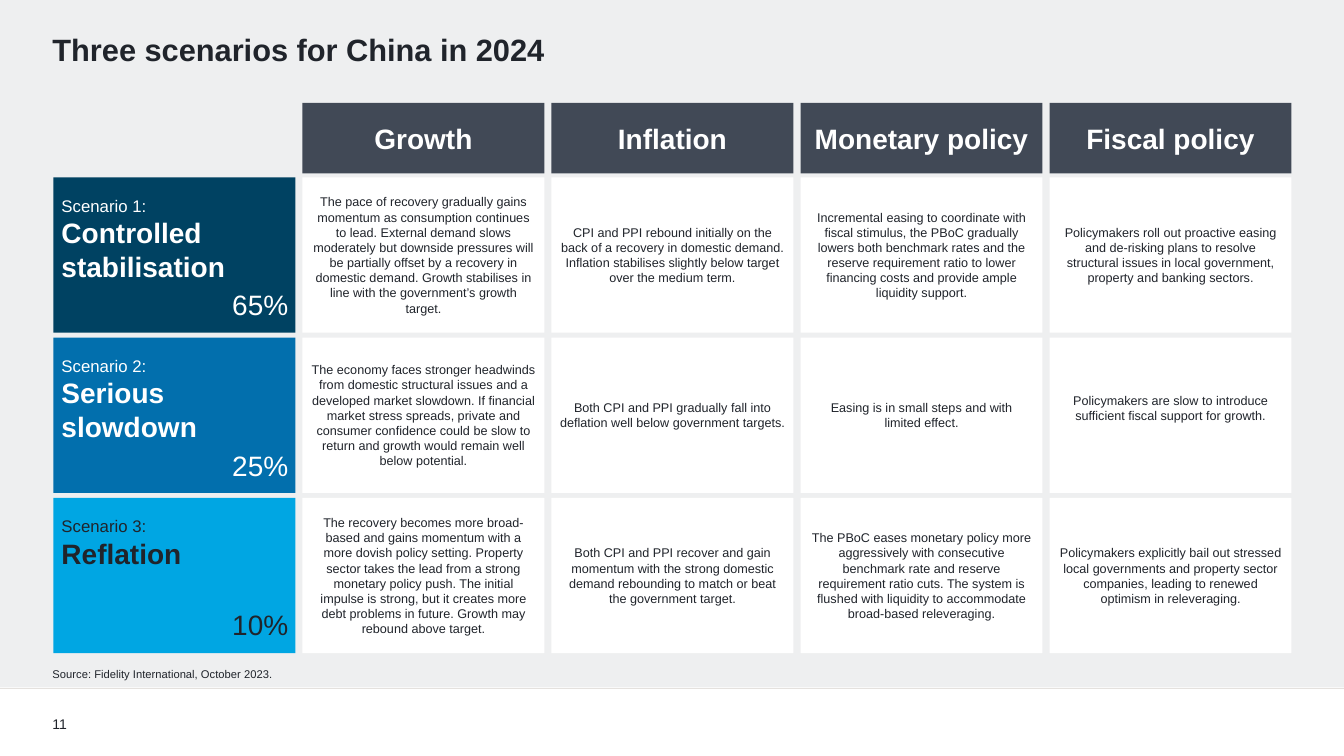
from dataclasses import dataclass

from lxml import etree
from pptx import Presentation
from pptx.dml.color import RGBColor
from pptx.enum.shapes import MSO_CONNECTOR, MSO_SHAPE
from pptx.enum.text import MSO_ANCHOR, PP_ALIGN
from pptx.oxml.ns import qn
from pptx.util import Inches, Pt

LEFT, CENTER, RIGHT = PP_ALIGN.LEFT, PP_ALIGN.CENTER, PP_ALIGN.RIGHT
TOP, MIDDLE, BOTTOM = MSO_ANCHOR.TOP, MSO_ANCHOR.MIDDLE, MSO_ANCHOR.BOTTOM
RECTANGLE = MSO_SHAPE.RECTANGLE
STRAIGHT = MSO_CONNECTOR.STRAIGHT
TITLE_ONLY = 5


@dataclass(frozen=True)
class Theme:
    font: str = "Arial"
    ink: str = "20242B"
    white: str = "FFFFFF"
    panel: str = "EEEFF0"
    rule: str = "E4E1DE"
    header: str = "414956"
    controlled: str = "004262"
    slowdown: str = "026FAD"
    reflation: str = "00A6E3"
    title_size: float = 22
    heading_size: float = 20
    label_size: float = 12
    number_size: float = 10
    body_size: float = 9
    source_size: float = 8


THEME = Theme()
NO_INSETS = (0, 0, 0, 0)
CELL_INSETS = (0.08, 0.04, 0.08, 0.04)
RAISED_INSETS = (0.08, 0.04, 0.08, 0.18)
SCENARIO_INSETS = (0.08, 0.18, 0.08, 0.04)

GRID_LEFT, COLUMN_STEP, CELL_WIDTH = 0.53, 2.47, 2.4
HEADER_TOP, HEADER_HEIGHT = 1.02, 0.7
GRID_TOP, ROW_STEP, CELL_HEIGHT = 1.76, 1.59, 1.54

TOPICS = ["Growth", "Inflation", "Monetary policy", "Fiscal policy"]

# Name, probability, top of the probability, fill, text colour, outlook per topic
SCENARIOS = [
    ("Controlled stabilisation", "65%", 2.85, THEME.controlled, THEME.white, [
        "The pace of recovery gradually gains momentum as consumption continues "
        "to lead. External demand slows moderately but downside pressures will be "
        "partially offset by a recovery in domestic demand. Growth stabilises in "
        "line with the government’s growth target.",
        "CPI and PPI rebound initially on the back of a recovery in domestic "
        "demand. Inflation stabilises slightly below target over the medium term.",
        "Incremental easing to coordinate with fiscal stimulus, the PBoC gradually "
        "lowers both benchmark rates and the reserve requirement ratio to lower "
        "financing costs and provide ample liquidity support.",
        "Policymakers roll out proactive easing and de-risking plans to resolve "
        "structural issues in local government, property and banking sectors.",
    ]),
    ("Serious slowdown", "25%", 4.45, THEME.slowdown, THEME.white, [
        "The economy faces stronger headwinds from domestic structural issues and "
        "a developed market slowdown. If financial market stress spreads, private "
        "and consumer confidence could be slow to return and growth would remain "
        "well below potential.",
        "Both CPI and PPI gradually fall into deflation well below government "
        "targets.",
        "Easing is in small steps and with\nlimited effect.",
        "Policymakers are slow to introduce sufficient fiscal support for growth.",
    ]),
    ("Reflation", "10%", 6.03, THEME.reflation, THEME.ink, [
        "The recovery becomes more broad-based and gains momentum with a more "
        "dovish policy setting. Property sector takes the lead from a strong "
        "monetary policy push. The initial impulse is strong, but it creates more "
        "debt problems in future. Growth may rebound above target.",
        "Both CPI and PPI recover and gain momentum with the strong domestic "
        "demand rebounding to match or beat the government target.",
        "The PBoC eases monetary policy more aggressively with consecutive "
        "benchmark rate and reserve requirement ratio cuts. The system is flushed "
        "with liquidity to accommodate broad-based releveraging.",
        "Policymakers explicitly bail out stressed local governments and property "
        "sector companies, leading to renewed optimism in releveraging.",
    ]),
]
RAISED_CELL = ("Serious slowdown", "Fiscal policy")


class SlideBuilder:
    def __init__(self, page, theme):
        self.page = page
        self.theme = theme

    def set_lines(self, shape, lines, color, align=LEFT, anchor=TOP,
                  insets=NO_INSETS, spacing=None):
        """Fill a shape with one paragraph per (text, size, bold) line."""
        frame = shape.text_frame
        frame.word_wrap = True
        frame.vertical_anchor = anchor
        (frame.margin_left, frame.margin_top,
         frame.margin_right, frame.margin_bottom) = map(Inches, insets)
        for index, (text, size, bold) in enumerate(lines):
            para = frame.add_paragraph() if index else frame.paragraphs[0]
            para.alignment = align
            if spacing:
                para.line_spacing = spacing
            for part_index, part in enumerate(text.split("\n")):
                if part_index:
                    para.add_line_break()
                span = para.add_run()
                span.text = part
                span.font.name = self.theme.font
                span.font.size = Pt(size)
                span.font.bold = bold
                span.font.color.rgb = RGBColor.from_string(color)

    def title(self, text, place):
        title = self.page.shapes.title
        title.left, title.top, title.width, title.height = map(Inches, place)
        self.set_lines(title, [(text, self.theme.title_size, True)], self.theme.ink,
                       anchor=BOTTOM, spacing=0.9)
        # Bring the title in front of the panel
        title.element.getparent().append(title.element)

    def text(self, place, text, size, color, **layout):
        box = self.page.shapes.add_textbox(*map(Inches, place))
        self.set_lines(box, [(text, size, False)], color, **layout)

    def rectangle(self, place, fill):
        box = self.page.shapes.add_shape(RECTANGLE, *map(Inches, place))
        box.shadow.inherit = False
        box.fill.solid()
        box.fill.fore_color.rgb = RGBColor.from_string(fill)
        box.line.fill.background()
        return box

    def cell(self, place, fill, lines, color, align=CENTER, anchor=MIDDLE,
             insets=CELL_INSETS):
        box = self.rectangle(place, fill)
        self.set_lines(box, lines, color, align, anchor, insets)

    def rule(self, left, right, top):
        line = self.page.shapes.add_connector(
            STRAIGHT, Inches(left), Inches(top), Inches(right), Inches(top))
        line.line.color.rgb = RGBColor.from_string(self.theme.rule)
        line.line.width = Pt(0.5)
        etree.SubElement(line.element.spPr, qn("a:effectLst"))


def column_left(column):
    return GRID_LEFT + column * COLUMN_STEP


def add_headers(builder):
    theme = builder.theme
    for column, topic in enumerate(TOPICS, start=1):
        place = (column_left(column), HEADER_TOP, CELL_WIDTH, HEADER_HEIGHT)
        builder.cell(place, theme.header, [(topic, theme.heading_size, True)],
                     theme.white)


def add_scenarios(builder):
    theme = builder.theme
    for row, (name, chance, chance_top, fill, color, outlooks) in enumerate(SCENARIOS):
        top = GRID_TOP + row * ROW_STEP
        lines = [(f"Scenario {row + 1}:", theme.label_size, False),
                 (name, theme.heading_size, True)]
        builder.cell((GRID_LEFT, top, CELL_WIDTH, CELL_HEIGHT), fill, lines, color,
                     align=LEFT, anchor=TOP, insets=SCENARIO_INSETS)
        for column, (topic, outlook) in enumerate(zip(TOPICS, outlooks), start=1):
            raised = (name, topic) == RAISED_CELL
            builder.cell((column_left(column), top, CELL_WIDTH, CELL_HEIGHT),
                         theme.white, [(outlook, theme.body_size, False)], theme.ink,
                         insets=RAISED_INSETS if raised else CELL_INSETS)
        builder.text((2.16, chance_top, 0.7, 0.34), chance, theme.heading_size,
                     color, align=RIGHT)


def main():
    deck = Presentation()
    deck.slide_width, deck.slide_height = Inches(13.33), Inches(7.5)
    page = deck.slides.add_slide(deck.slide_layouts[TITLE_ONLY])
    builder = SlideBuilder(page, THEME)
    builder.rule(0, 13.33, 6.83)
    builder.text((0.52, 7.07, 0.27, 0.19), "11", THEME.number_size, THEME.ink,
                 anchor=BOTTOM)
    builder.rectangle((0, 0, 13.33, 6.82), THEME.panel)
    builder.title("Three scenarios for China in 2024", (0.52, 0.35, 12.6, 0.33))
    builder.text((0.52, 6.65, 12.28, 0.11),
                 "Source: Fidelity International, October 2023.",
                 THEME.source_size, THEME.ink, anchor=BOTTOM, spacing=0.9)
    add_headers(builder)
    add_scenarios(builder)
    deck.save("out.pptx")


if __name__ == "__main__":
    main()
